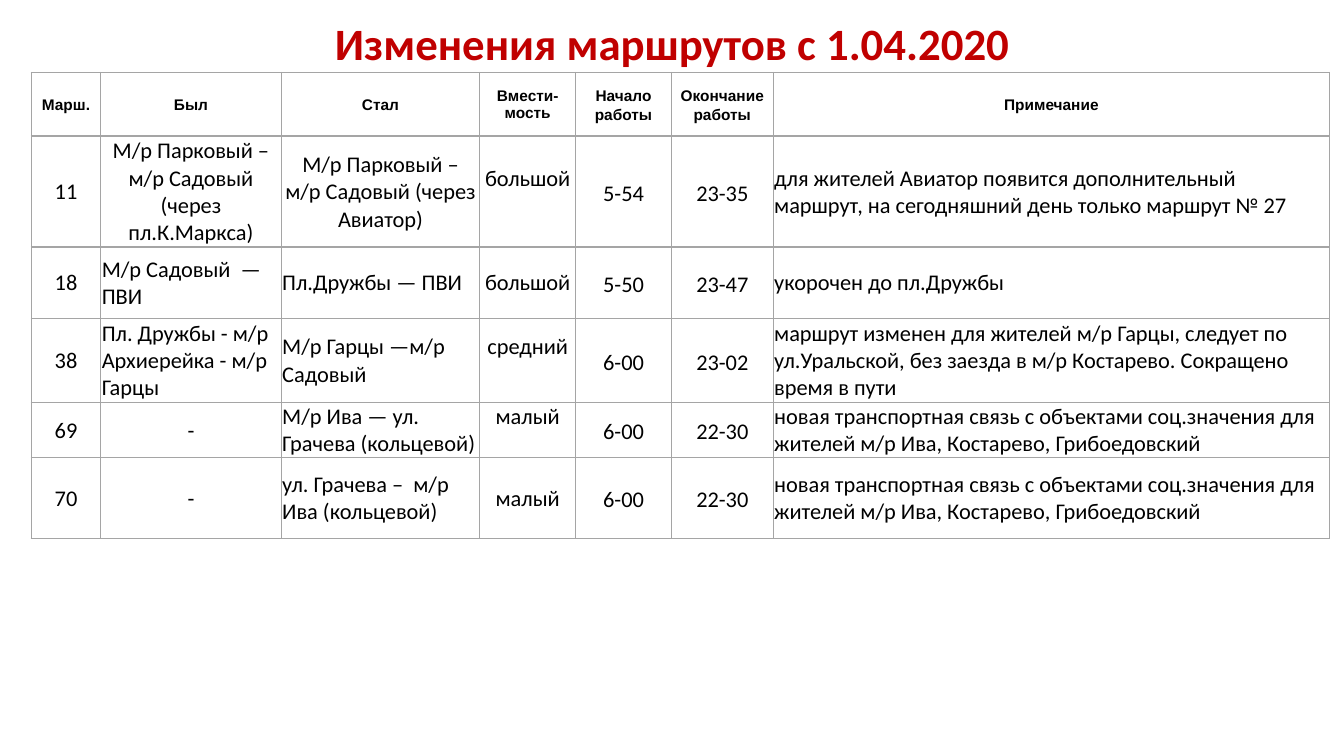
from lxml.etree import SubElement
from pptx import Presentation
from pptx.dml.color import RGBColor
from pptx.enum.text import MSO_ANCHOR, PP_ALIGN
from pptx.oxml.ns import qn
from pptx.util import Inches, Pt

HEADINGS = ["Марш.", "Был", "Стал", "Вмести-мость", "Начало работы",
            "Окончание работы", "Примечание"]
NEW_LINK = ("новая транспортная связь с объектами соц.значения для жителей "
            "м/р Ива, Костарево, Грибоедовский")
ROUTES = [
    ["11", "М/р Парковый – м/р Садовый (через пл.К.Маркса)",
     "М/р Парковый – м/р Садовый (через Авиатор)", "большой", "5-54", "23-35",
     "для жителей Авиатор появится дополнительный маршрут, "
     "на сегодняшний день только маршрут № 27"],
    ["18", "М/р Садовый  — ПВИ", "Пл.Дружбы — ПВИ", "большой", "5-50", "23-47",
     "укорочен до пл.Дружбы"],
    ["38", "Пл. Дружбы - м/р Архиерейка - м/р Гарцы", "М/р Гарцы —м/р Садовый",
     "средний", "6-00", "23-02",
     "маршрут изменен для жителей м/р Гарцы, следует по ул.Уральской, "
     "без заезда в м/р Костарево. Сокращено время в пути"],
    ["69", "-", "М/р Ива — ул. Грачева (кольцевой)", "малый", "6-00", "22-30", NEW_LINK],
    ["70", "-", "ул. Грачева –  м/р Ива (кольцевой)", "малый", "6-00", "22-30", NEW_LINK],
]
COLUMN_WIDTHS = [0.69, 1.79, 1.97, 0.95, 0.95, 1.01, 5.52]
ROW_HEIGHTS = [0.63, 1.1, 0.71, 0.83, 0.55, 0.8]
BEFORE, AFTER, CAPACITY, START, END, NOTE = range(1, 7)
RAISED_CAPACITY = {"11", "38", "69"}


def color(value):
    return RGBColor.from_string(value)


class RouteSlide:
    accent = "C00000"
    ink = "000000"
    grid = "A5A5A5"

    def __init__(self, deck):
        self.page = deck.slides.add_slide(deck.slide_layouts[6])

    def paragraph(self, frame, text, size, font, bold, ink, align, spacing=1.0):
        para = frame.paragraphs[0]
        para.text = text
        para.alignment = align
        para.line_spacing = spacing
        para.font.size = Pt(size)
        para.font.name = font
        para.font.bold = bold
        para.font.color.rgb = color(ink)

    def title(self, text, left, top, width, height):
        box = self.page.shapes.add_textbox(
            Inches(left), Inches(top), Inches(width), Inches(height))
        frame = box.text_frame
        frame.word_wrap = True
        frame.vertical_anchor = MSO_ANCHOR.MIDDLE
        frame.margin_bottom = Inches(0.58)
        self.paragraph(frame, text, 32, "Calibri", True, self.accent,
                       PP_ALIGN.CENTER, 0.9)

    def border(self, cell):
        properties = cell._tc.get_or_add_tcPr()
        for position, side in enumerate(("a:lnL", "a:lnR", "a:lnT", "a:lnB")):
            line = SubElement(properties, qn(side), w=str(Pt(1)))
            fill = SubElement(line, qn("a:solidFill"))
            SubElement(fill, qn("a:srgbClr"), val=self.grid)
            properties.insert(position, line)

    def cell(self, cell, text, column, heading, align, raised):
        timed = column in (START, END)
        cell.vertical_anchor = MSO_ANCHOR.MIDDLE
        cell.margin_left = cell.margin_right = Inches(0.07 if timed else 0.01)
        cell.margin_top = Inches(0 if timed else 0.01)
        cell.margin_bottom = Inches(0.27 if raised else 0)
        cell.fill.background()
        self.border(cell)
        size, font = (11, "Arial") if heading else (16, "Calibri")
        self.paragraph(cell.text_frame, text, size, font, heading, self.ink, align,
                       1.15 if timed else 1.0)

    def table(self, rows, left, top):
        frame = self.page.shapes.add_table(
            len(rows), len(COLUMN_WIDTHS), Inches(left), Inches(top),
            Inches(sum(COLUMN_WIDTHS)), Inches(sum(ROW_HEIGHTS)))
        table = frame.table
        table.first_row = table.horz_banding = False
        for column, width in zip(table.columns, COLUMN_WIDTHS):
            column.width = Inches(width)
        for row, height in zip(table.rows, ROW_HEIGHTS):
            row.height = Inches(height)
        for row_index, values in enumerate(rows):
            heading = row_index == 0
            for column, text in enumerate(values):
                centered = (heading or column not in (BEFORE, AFTER, NOTE) or text == "-"
                            or (row_index == 1 and column != NOTE))
                align = PP_ALIGN.CENTER if centered else PP_ALIGN.LEFT
                raised = column == CAPACITY and values[0] in RAISED_CAPACITY
                self.cell(table.cell(row_index, column), text, column, heading,
                          align, raised)


def main():
    deck = Presentation()
    deck.slide_width = Inches(13.33)
    deck.slide_height = Inches(7.5)
    slide = RouteSlide(deck)
    slide.title("Изменения маршрутов с 1.04.2020", 0.92, 0, 11.5, 1.45)
    slide.table([HEADINGS] + ROUTES, 0.31, 0.72)
    deck.save("out.pptx")


if __name__ == "__main__":
    main()
